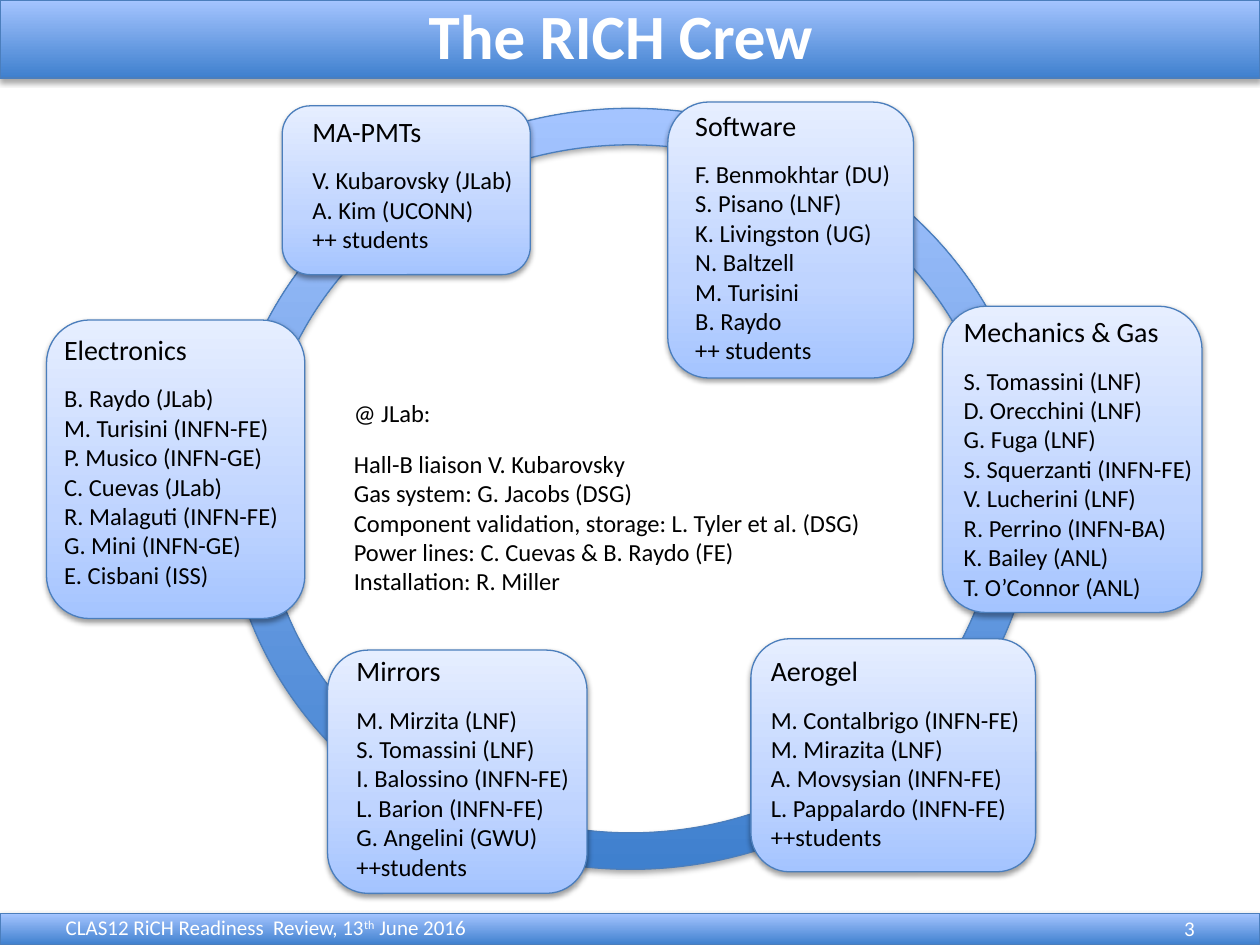
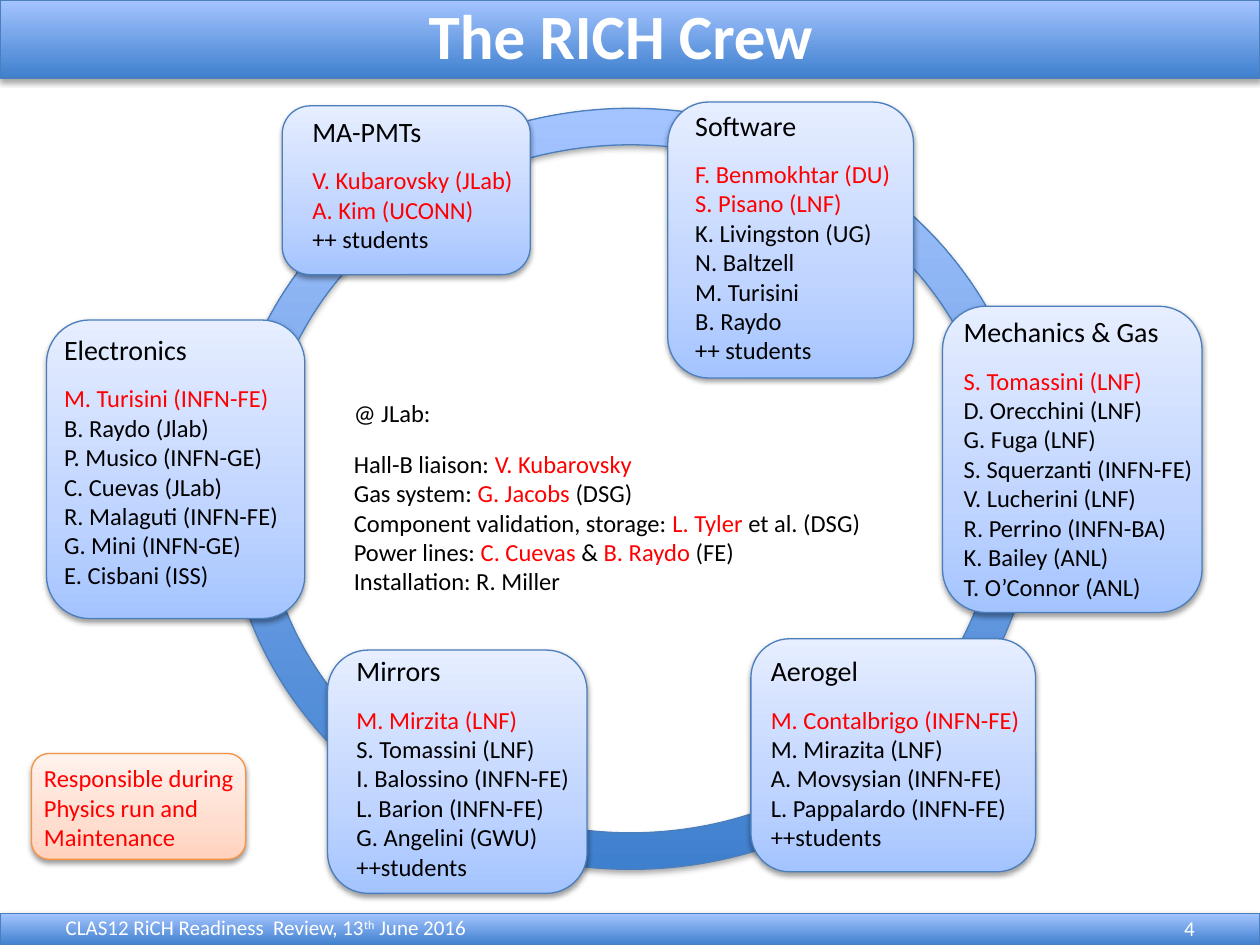
import pptx
import pptx.util
import pptx.dml.color
import pptx.enum.shapes
import pptx.enum.text
import pptx.oxml
import pptx.oxml.ns

Pt = pptx.util.Pt
RGB = pptx.dml.color.RGBColor
SHAPE = pptx.enum.shapes.MSO_SHAPE
ALIGN = pptx.enum.text.PP_ALIGN
ANCHOR = pptx.enum.text.MSO_ANCHOR
FIT = pptx.enum.text.MSO_AUTO_SIZE

FONT = "Calibri"
BLACK = RGB(0x00, 0x00, 0x00)
WHITE = RGB(0xFF, 0xFF, 0xFF)
RED = RGB(0xFF, 0x00, 0x00)
BLUE_LINE = RGB(0x4B, 0x7E, 0xBC)
ORANGE_LINE = RGB(0xF6, 0x92, 0x40)
DEEP_BLUE = RGB(0x3F, 0x80, 0xCE)
SKY_BLUE = RGB(0xA4, 0xC4, 0xFF)
MID_BLUE = RGB(0xBF, 0xD4, 0xFF)
PALE_BLUE = RGB(0xE6, 0xEE, 0xFF)
PEACH = RGB(0xFF, 0xD2, 0xBD)
MID_PEACH = RGB(0xFF, 0xDE, 0xD0)
PALE_PEACH = RGB(0xFF, 0xF2, 0xED)

BAND = {"stops": [(0, DEEP_BLUE), (100, SKY_BLUE)], "line": BLUE_LINE, "shadow": (35, 1.8)}
CARD = {"stops": [(0, SKY_BLUE), (35, MID_BLUE), (100, PALE_BLUE)], "line": BLUE_LINE, "shadow": (38, 1.6)}
LEGEND = {"stops": [(0, PEACH), (35, MID_PEACH), (100, PALE_PEACH)], "line": ORANGE_LINE, "shadow": (38, 1.6)}

TITLE = "The RICH Crew"
FOOTER = [("CLAS12 RiCH Readiness  Review, 13", 0), ("th", 30000), (" June 2016", 0)]
LEGEND_LINES = ["*Responsible during*", "*Physics run and*", "*Maintenance*"]

# Text between asterisks names the people responsible.
TEAMS = [
    {"name": "Electronics", "card": (26.6, 182.9, 147.6, 170.6), "text": (29.5, 186.5, 144.7, 154.8), "wrap": True},
    {"name": "MA-PMTs", "card": (161.3, 60.5, 141.8, 96.5), "text": (171.4, 61.9, 131.8, 87.1),
     "people": ["*V. Kubarovsky (JLab)*", "*A. Kim (UCONN)*", "++ students"]},
    {"name": "Software", "card": (381.6, 58.3, 140.4, 157.7), "text": (390.2, 58.3, 128.9, 157.7),
     "people": ["*F. Benmokhtar (DU)*", "*S. Pisano (LNF)*", "K. Livingston (UG)", "N. Baltzell",
                "M. Turisini", "B. Raydo", "++ students"]},
    {"name": "Mechanics & Gas", "card": (538.6, 175, 148.3, 175), "text": (543.6, 176.4, 146.9, 174.2),
     "people": ["*S. Tomassini (LNF)*", "D. Orecchini (LNF)", "G. Fuga (LNF)", "S. Squerzanti (INFN-FE)",
                "V. Lucherini (LNF)", "R. Perrino (INFN-BA)", "K. Bailey (ANL)", "T. O’Connor (ANL)"]},
    {"name": "Aerogel", "card": (429.1, 365, 162.7, 133.2), "text": (433.4, 370.1, 158.4, 121),
     "people": ["*M. Contalbrigo (INFN-FE)*", "M. Mirazita (LNF)", "A. Movsysian (INFN-FE)",
                "L. Pappalardo (INFN-FE)", "++students"]},
    {"name": "Mirrors", "card": (187.2, 371.5, 148.3, 139), "text": (196.6, 370.1, 136.8, 140.4),
     "people": ["*M. Mirzita (LNF)*", "S. Tomassini (LNF)", "I. Balossino (INFN-FE)",
                "L. Barion (INFN-FE)", "G. Angelini (GWU)", "++students"]},
]
ELECTRONICS_REST = ["P. Musico (INFN-GE)", "C. Cuevas (JLab)", "R. Malaguti (INFN-FE)",
                    "G. Mini (INFN-GE)", "E. Cisbani (ISS)"]
ON_SITE = ["Gas system: *G. Jacobs *(DSG)", "Component validation, storage: *L. Tyler *et al. (DSG)",
           "Power lines: *C. Cuevas *& *B. Raydo *(FE)", "Installation: R. Miller"]
SLIDES = [
    {"number": 3, "accent": BLACK, "legend": False, "liaison": "Hall-B liaison *V. Kubarovsky*",
     "electronics": ["B. Raydo (JLab)", "M. Turisini (INFN-FE)"]},
    {"number": 4, "accent": RED, "legend": True, "liaison": "Hall-B liaison: *V. Kubarovsky*",
     "electronics": ["*M. Turisini (INFN-FE)*", "B. Raydo (Jlab)"]},
]


def add_panel(shapes, kind, box, style):
    sp = shapes.add_shape(kind, *map(Pt, box))
    sp.fill.gradient()
    sp.fill.gradient_angle = 90
    sp.line.color.rgb = style["line"]
    sp.line.width = Pt(0.75)
    sp.shadow.inherit = False
    ns = pptx.oxml.ns.nsdecls("a")
    spPr = sp._element.spPr
    stops = spPr.find(".//" + pptx.oxml.ns.qn("a:gsLst"))
    for stop in list(stops):
        stops.remove(stop)
    for pos, color in style["stops"]:
        stops.append(pptx.oxml.parse_xml(
            f'<a:gs {ns} pos="{pos * 1000}"><a:srgbClr val="{color}"/></a:gs>'))
    alpha, dist = style["shadow"]
    spPr.find(pptx.oxml.ns.qn("a:effectLst")).append(pptx.oxml.parse_xml(
        f'<a:outerShdw {ns} blurRad="{Pt(3.1)}" dist="{Pt(dist)}" dir="5400000" rotWithShape="0">'
        f'<a:srgbClr val="000000"><a:alpha val="{alpha * 1000}"/></a:srgbClr></a:outerShdw>'))
    return sp


def add_text_frame(shapes, box, **formats):
    tf = shapes.add_textbox(*map(Pt, box)).text_frame
    for name, value in formats.items():
        setattr(tf, name, value)
    return tf


def add_run(p, text, size, color, bold=False):
    r = p.add_run()
    r.text = text
    for name, value in {"name": FONT, "size": Pt(size), "bold": bold}.items():
        setattr(r.font, name, value)
    r.font.color.rgb = color
    return r


def add_lines(shapes, box, lines, accent, heading_size=14, gap=0, wrap=False):
    tf = add_text_frame(shapes, box, word_wrap=wrap, auto_size=FIT.SHAPE_TO_FIT_TEXT)
    for i, line in enumerate(lines):
        p = tf.paragraphs[0] if i == 0 else tf.add_paragraph()
        if i == 0:
            p.space_after = Pt(gap)
        for j, part in enumerate(line.split("*")):
            if part:
                add_run(p, part, 14 if i else heading_size, accent if j % 2 else BLACK)


def add_frame(shapes, number):
    add_panel(shapes, SHAPE.RECTANGLE, (0, 0, 720, 44.6), BAND)
    p = add_text_frame(shapes, (236.2, -5.8, 236.9, 51.1), word_wrap=False,
                       auto_size=FIT.SHAPE_TO_FIT_TEXT).paragraphs[0]
    p.alignment = ALIGN.CENTER
    add_run(p, TITLE, 36, WHITE, True)
    add_panel(shapes, SHAPE.RECTANGLE, (0, 522, 720, 18), BAND)
    bottom = {"word_wrap": True, "vertical_anchor": ANCHOR.BOTTOM}
    p = add_text_frame(shapes, (522, 512.6, 167.8, 28.8), **bottom).paragraphs[0]
    p.alignment = ALIGN.RIGHT
    add_run(p, str(number), 12, WHITE)
    p = add_text_frame(shapes, (21.6, 511.9, 260.6, 28.8), **bottom).paragraphs[0]
    p.alignment = ALIGN.CENTER
    for text, baseline in FOOTER:
        r = add_run(p, text, 12, WHITE)
        if baseline:
            r.font._element.set("baseline", str(baseline))


def add_crew_slide(prs, crew):
    shapes = prs.slides.add_slide(prs.slide_layouts[6]).shapes
    accent = crew["accent"]
    add_frame(shapes, crew["number"])
    ring = add_panel(shapes, SHAPE.DONUT, (128.9, 61.9, 463, 434.9), BAND)
    ring.adjustments[0] = 0.048
    for team in TEAMS:
        people = team.get("people") or crew["electronics"] + ELECTRONICS_REST
        group = shapes.add_group_shape().shapes
        add_panel(group, SHAPE.ROUNDED_RECTANGLE, team["card"], CARD)
        add_lines(group, team["text"], [team["name"]] + people, accent, 16, 9.8, team.get("wrap", False))
    add_lines(shapes, (195.1, 223.9, 307.4, 121), ["@ JLab:", crew["liaison"]] + ON_SITE, accent, gap=12.2)
    if crew["legend"]:
        add_panel(shapes, SHAPE.ROUNDED_RECTANGLE, (18, 430.6, 122.4, 60.5), LEGEND)
        add_lines(shapes, (18, 432.7, 123.8, 58.3), LEGEND_LINES, accent)


def main():
    prs = pptx.Presentation()
    prs.slide_width, prs.slide_height = Pt(720), Pt(540)
    for crew in SLIDES:
        add_crew_slide(prs, crew)
    prs.save("out.pptx")


if __name__ == "__main__":
    main()
